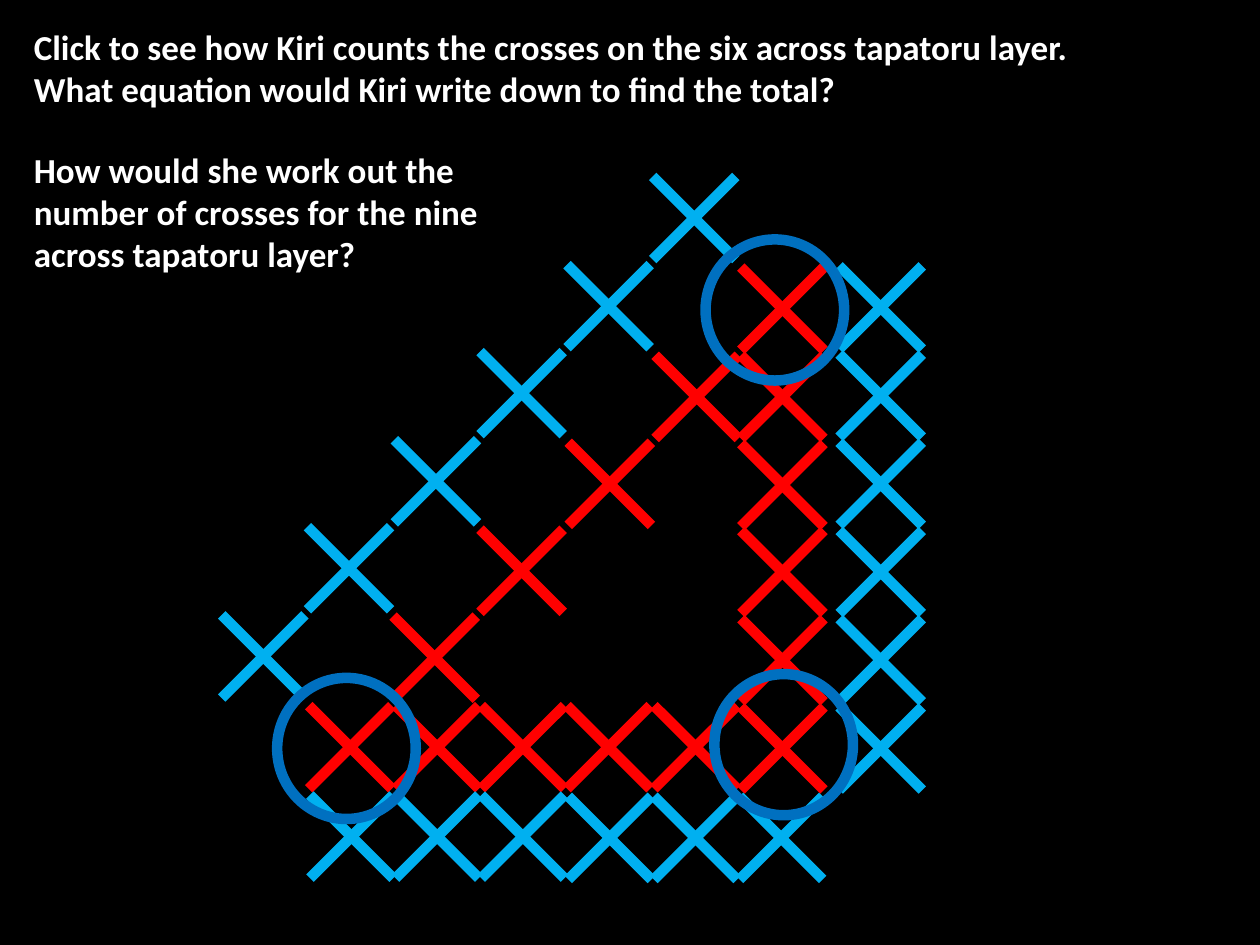
from lxml.etree import SubElement
from pptx import Presentation
from pptx.dml.color import RGBColor
from pptx.enum.shapes import MSO_CONNECTOR, MSO_SHAPE
from pptx.enum.text import MSO_AUTO_SIZE
from pptx.oxml.ns import qn
from pptx.util import Pt

PX = 9144
BLACK = RGBColor(0, 0, 0)
WHITE = RGBColor(255, 255, 255)
RED = RGBColor(255, 0, 0)
SKY = RGBColor(0, 176, 240)
BLUE = RGBColor(0, 112, 192)
ARM = 66
STROKE = Pt(6)

INNER = [((412, 72), (412, 421), 6), ((69, 420), (343, 420), 5),
         ((136, 349), (344, 142), 4)]
OUTER = [((70, 491), (411, 492), 6), ((490, 71), (490, 421), 6),
         ((0, 348), (342, 0), 6)]
CORNERS = [(384, 50), (44, 398), (391, 395)]


def emu(*sizes):
    return [size * PX for size in sizes]


def add_text(slide, box, text):
    label = slide.shapes.add_textbox(*emu(*box))
    frame = label.text_frame
    frame.word_wrap = True
    frame.auto_size = MSO_AUTO_SIZE.SHAPE_TO_FIT_TEXT
    frame.text = text
    font = frame.paragraphs[0].runs[0].font
    font.name = "Calibri"
    font.size = Pt(20)
    font.bold = True
    font.color.rgb = WHITE


def add_cross(group, left, top, color):
    right, base = left + ARM, top + ARM
    for ends in ((left, top, right, base), (right, top, left, base)):
        arm = group.shapes.add_connector(MSO_CONNECTOR.STRAIGHT, *emu(*ends))
        arm.line.color.rgb = color
        arm.line.width = STROKE
        SubElement(arm._element.spPr, qn("a:effectLst"))


def spread(side):
    (left, top), (right, base), count = side
    for step in range(count):
        part = step / (count - 1)
        yield round(left + (right - left) * part), round(top + (base - top) * part)


def add_layer(slide, box):
    left, top = box
    core = slide.shapes.add_group_shape()
    for side in INNER:
        for x, y in spread(side):
            add_cross(core, left + x, top + y, RED)
    for side in OUTER:
        for x, y in spread(side):
            add_cross(slide.shapes.add_group_shape(), left + x, top + y, SKY)
    for x, y in CORNERS:
        ring = slide.shapes.add_shape(MSO_SHAPE.OVAL, *emu(left + x, top + y, 110, 112))
        ring.shadow.inherit = False
        ring.fill.background()
        ring.line.color.rgb = BLUE
        ring.line.width = STROKE


def main():
    deck = Presentation()
    deck.slide_width, deck.slide_height = emu(1000, 750)
    slide = deck.slides.add_slide(deck.slide_layouts[6])
    slide.background.fill.solid()
    slide.background.fill.fore_color.rgb = BLACK
    add_text(slide, (17, 15, 892, 77),
             "Click to see how Kiri counts the crosses on the six across tapatoru layer. "
             "What equation would Kiri write down to find the total?")
    add_layer(slide, (176, 140))
    add_text(slide, (17, 113, 389, 145),
             "How would she work out the number of crosses for the nine across tapatoru layer?")
    deck.save("out.pptx")


if __name__ == "__main__":
    main()
